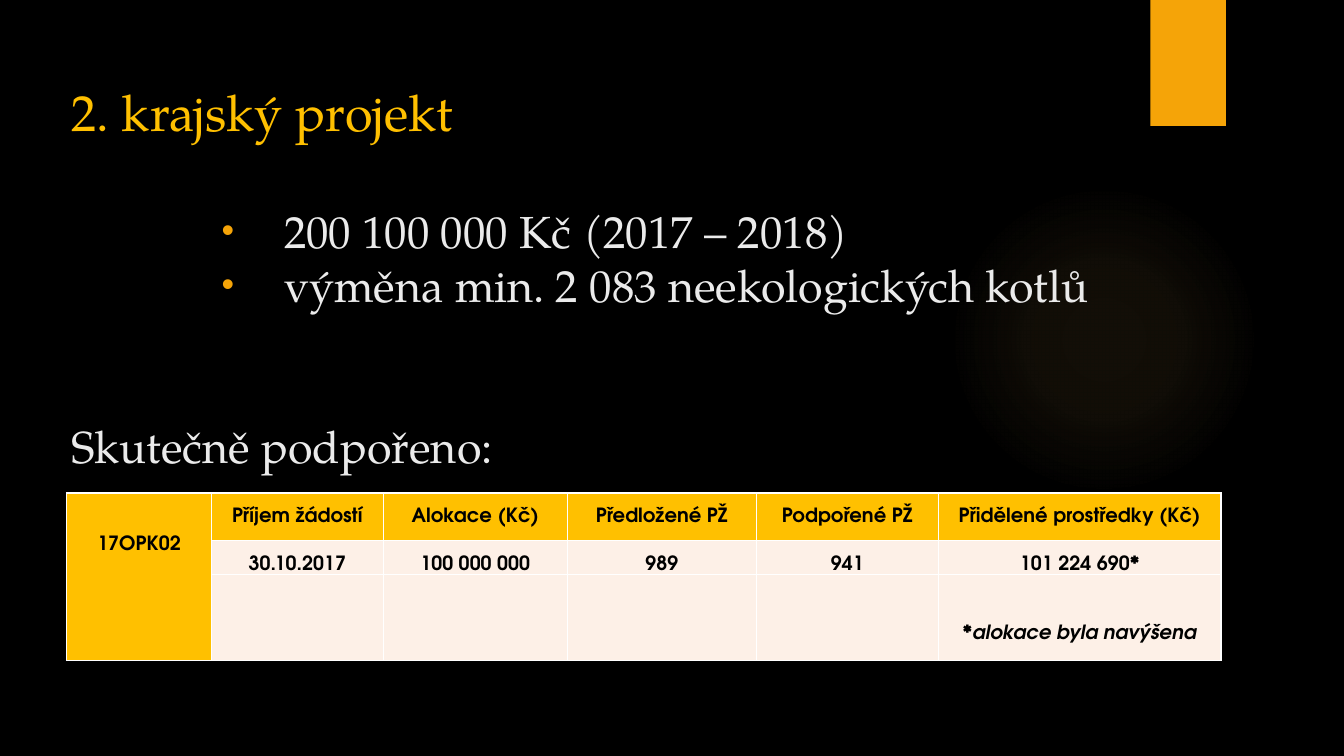
from lxml import etree
from pptx import Presentation
from pptx.dml.color import RGBColor
from pptx.enum.shapes import MSO_SHAPE
from pptx.enum.text import MSO_ANCHOR, MSO_AUTO_SIZE, PP_ALIGN
from pptx.oxml import parse_xml
from pptx.oxml.ns import nsdecls, qn
from pptx.util import Inches, Pt

COLORS = {
    "bg": "000000", "glow": "FAC96A", "accent": "F5A408", "gold": "FFC000",
    "text": "EBEBEB", "dark": "000000", "cell": "FDF0E7", "border": "FFFFFF",
}
SERIF, SANS = "TeX Gyre Pagella", "TeX Gyre Adventor"
COLS = [1.44, 1.7, 1.83, 1.87, 1.81, 2.8]
ROWS = [0.47, 0.34, 0.85]
HEADERS = ["Příjem žádostí", "Alokace (Kč)", "Předložené PŽ", "Podpořené PŽ",
           "Přidělené prostředky (Kč)"]
VALUES = ["30.10.2017", "100 000 000", "989", "941", "101 224 690*"]


def rgb(name):
    """Return a palette colour."""
    return RGBColor.from_string(COLORS[name])


def add_run(p, text, size, font, color, bold=False, italic=False):
    """Append a formatted run to a paragraph."""
    r = p.add_run()
    r.text = text
    r.font.size, r.font.name = Pt(size), font
    r.font.bold, r.font.italic = bold, italic
    r.font.color.rgb = rgb(color)


def add_decor(s):
    """Draw the soft glow and the ribbon at the top."""
    glow = s.shapes.add_shape(MSO_SHAPE.OVAL, Inches(9.41), Inches(1.83),
                              Inches(3.08), Inches(3.08))
    stops = "".join(
        f'<a:gs pos="{pos}000"><a:srgbClr val="{COLORS["glow"]}">'
        f'<a:alpha val="{alpha}000"/></a:srgbClr></a:gs>'
        for pos, alpha in [(0, 7), (36, 6), (69, 0)])
    grad = parse_xml(
        f'<a:gradFill {nsdecls("a")} rotWithShape="1"><a:gsLst>{stops}</a:gsLst>'
        '<a:path path="circle"><a:fillToRect l="50000" t="50000" r="50000" b="50000"/>'
        '</a:path></a:gradFill>')
    glow._element.spPr.find(qn("a:prstGeom")).addnext(grad)
    ribbon = s.shapes.add_shape(MSO_SHAPE.RECTANGLE, Inches(11.41), 0,
                                Inches(0.75), Inches(1.25))
    ribbon.fill.solid()
    ribbon.fill.fore_color.rgb = rgb("accent")
    for sp in (glow, ribbon):
        sp.line.fill.background()
        sp.shadow.inherit = False


def set_frame(sp, x, y, w, h):
    """Place a text shape and return its top-anchored frame."""
    sp.left, sp.top, sp.width, sp.height = map(Inches, (x, y, w, h))
    tf = sp.text_frame
    tf.word_wrap, tf.auto_size = True, MSO_AUTO_SIZE.NONE
    tf.vertical_anchor = MSO_ANCHOR.TOP
    return tf


def add_title(s, x, y, w, h):
    """Fill the title placeholder."""
    p = set_frame(s.shapes.title, x, y, w, h).paragraphs[0]
    p.alignment = PP_ALIGN.LEFT
    add_run(p, "2. krajský projekt", 36, SERIF, "gold")


def add_text(s, x, y, w, h, lines, bullets=False):
    """Write lines of body text, bulleted on request."""
    tf = set_frame(s.shapes.add_textbox(0, 0, 0, 0), x, y, w, h)
    for i, line in enumerate(lines):
        p = tf.add_paragraph() if i else tf.paragraphs[0]
        if bullets:
            pPr = p._p.get_or_add_pPr()
            pPr.set("marL", str(Inches(2.11)))
            pPr.set("indent", str(Inches(-0.62)))
            color = etree.SubElement(pPr, qn("a:buClr"))
            etree.SubElement(color, qn("a:srgbClr"), val=COLORS["accent"])
            etree.SubElement(pPr, qn("a:buSzPct"), val="80000")
            etree.SubElement(pPr, qn("a:buFont"), typeface="Arial")
            etree.SubElement(pPr, qn("a:buChar"), char="•")
        add_run(p, line, 32, SERIF, "text")


def style_cell(cell, fill):
    """Set borders, fill and margins of a cell."""
    tcPr = cell._tc.get_or_add_tcPr()
    for i, side in enumerate(("lnL", "lnR", "lnT", "lnB")):
        tcPr.insert(i, parse_xml(
            f'<a:{side} {nsdecls("a")} w="12700"><a:solidFill>'
            f'<a:srgbClr val="{COLORS["border"]}"/></a:solidFill></a:{side}>'))
    cell.fill.solid()
    cell.fill.fore_color.rgb = rgb(fill)
    cell.margin_left = cell.margin_right = cell.margin_top = Inches(0.01)
    cell.margin_bottom = 0


def fill_cell(cell, text, anchor, italic=""):
    """Write centred bold text with an optional italic ending."""
    cell.vertical_anchor = anchor
    p = cell.text_frame.paragraphs[0]
    p.alignment = PP_ALIGN.CENTER
    add_run(p, text, 14, SANS, "dark", bold=True)
    if italic:
        add_run(p, italic, 14, SANS, "dark", bold=True, italic=True)


def add_support_table(s, x, y):
    """Build the table of supported applications."""
    table = s.shapes.add_table(len(ROWS), len(COLS), Inches(x), Inches(y),
                               Inches(sum(COLS)), Inches(sum(ROWS))).table
    for col, w in zip(table.columns, COLS):
        col.width = Inches(w)
    for row, h in zip(table.rows, ROWS):
        row.height = Inches(h)
    for r in range(len(ROWS)):
        for c in range(len(COLS)):
            style_cell(table.cell(r, c), "gold" if r == 0 or c == 0 else "cell")
    call = table.cell(0, 0)
    call.merge(table.cell(2, 0))
    call.margin_top = Inches(0.43)
    fill_cell(call, "17OPK02", MSO_ANCHOR.TOP)
    for c, (header, value) in enumerate(zip(HEADERS, VALUES), 1):
        fill_cell(table.cell(0, c), header, MSO_ANCHOR.MIDDLE)
        fill_cell(table.cell(1, c), value, MSO_ANCHOR.BOTTOM)
    note = table.cell(2, 5)
    fill_cell(note, "*", MSO_ANCHOR.BOTTOM, "alokace byla navýšena")
    note.margin_bottom = Inches(0.17)


def main():
    """Build the slide and save it."""
    prs = Presentation()
    prs.slide_width, prs.slide_height = Inches(13.33), Inches(7.5)
    s = prs.slides.add_slide(prs.slide_layouts[5])
    s.background.fill.solid()
    s.background.fill.fore_color.rgb = rgb("bg")
    add_decor(s)
    add_title(s, 0.61, 0.75, 10.5, 0.8)
    add_text(s, 0.61, 1.97, 11.56, 1.3,
             ["200 100 000 Kč (2017 – 2018)", "výměna min. 2 083 neekologických kotlů"],
             bullets=True)
    add_text(s, 0.61, 4.1, 11.56, 0.7, ["Skutečně podpořeno:"])
    add_support_table(s, 0.66, 4.89)
    prs.save("out.pptx")


if __name__ == "__main__":
    main()
